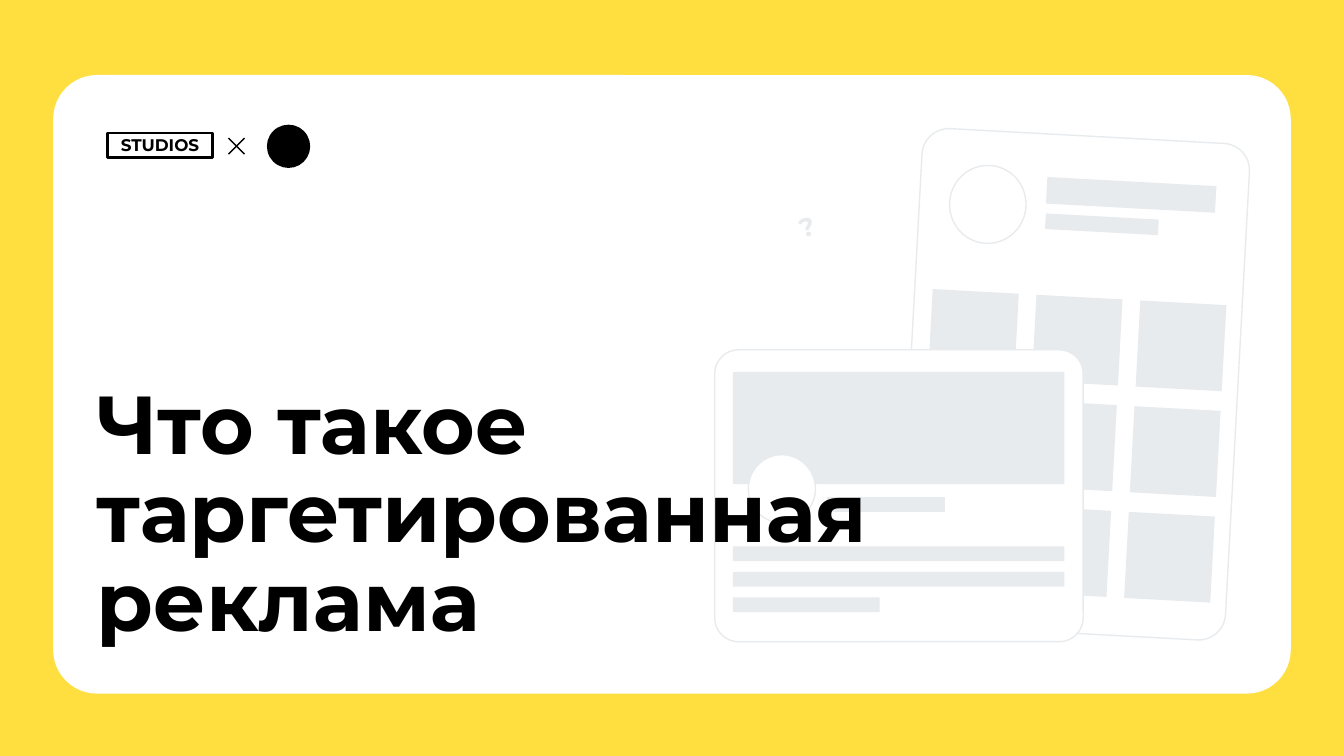
from dataclasses import dataclass
from math import cos, radians, sin
from typing import Optional

from lxml import etree
from pptx import Presentation
from pptx.dml.color import RGBColor
from pptx.enum.shapes import MSO_CONNECTOR, MSO_SHAPE
from pptx.enum.text import MSO_ANCHOR, PP_ALIGN
from pptx.oxml.ns import qn
from pptx.util import Pt

RECTANGLE = MSO_SHAPE.RECTANGLE
ROUNDED = MSO_SHAPE.ROUNDED_RECTANGLE
OVAL = MSO_SHAPE.OVAL
STRAIGHT = MSO_CONNECTOR.STRAIGHT
TOP, MIDDLE, BOTTOM = MSO_ANCHOR.TOP, MSO_ANCHOR.MIDDLE, MSO_ANCHOR.BOTTOM
LEFT, CENTER = PP_ALIGN.LEFT, PP_ALIGN.CENTER


@dataclass(frozen=True)
class Theme:
    yellow: str = "FFDE40"
    white: str = "FFFFFF"
    black: str = "000000"
    gray: str = "E8EBED"
    font: str = "Montserrat"
    title_size: float = 44
    mark_size: float = 14
    label_size: float = 9
    thin: float = 0.75
    frame: float = 1.5


THEME = Theme()


@dataclass(frozen=True)
class Block:
    """A preset shape; lengths in points, rotation in degrees."""
    left: float
    top: float
    width: float
    height: float
    kind: int = RECTANGLE
    fill: Optional[str] = THEME.gray
    line: Optional[str] = None
    line_width: float = THEME.thin
    corner: Optional[float] = None
    rotation: float = 0


def draw_block(slide, block: Block):
    shape = slide.shapes.add_shape(block.kind, Pt(block.left), Pt(block.top),
                                   Pt(block.width), Pt(block.height))
    shape.shadow.inherit = False
    shape.rotation = block.rotation
    if block.corner is not None:
        shape.adjustments[0] = block.corner
    if block.fill:
        shape.fill.solid()
        shape.fill.fore_color.rgb = RGBColor.from_string(block.fill)
    else:
        shape.fill.background()
    if block.line:
        shape.line.color.rgb = RGBColor.from_string(block.line)
        shape.line.width = Pt(block.line_width)
    else:
        shape.line.fill.background()
    return shape


def draw_line(slide, x1: float, y1: float, x2: float, y2: float) -> None:
    connector = slide.shapes.add_connector(STRAIGHT, Pt(x1), Pt(y1), Pt(x2), Pt(y2))
    connector.line.color.rgb = RGBColor.from_string(THEME.black)
    connector.line.width = Pt(THEME.thin)
    etree.SubElement(connector._element.spPr, qn("a:effectLst"))


def write(shape, text: str, size: float, color: str, align: int = CENTER,
          anchor: int = TOP, inset: float = 7.2, spacing: float = 1) -> None:
    frame = shape.text_frame
    frame.text = text
    frame.word_wrap = True
    frame.vertical_anchor = anchor
    frame.margin_left = frame.margin_right = Pt(inset)
    frame.margin_top = frame.margin_bottom = Pt(inset / 2)
    paragraph = frame.paragraphs[0]
    paragraph.alignment = align
    paragraph.line_spacing = spacing
    font = paragraph.runs[0].font
    font.name = THEME.font
    font.size = Pt(size)
    font.bold = True
    font.color.rgb = RGBColor.from_string(color)


def draw_partners(slide) -> None:
    label = draw_block(slide, Block(57.6, 71.3, 56.2, 13, fill=None,
                                    line=THEME.black, line_width=THEME.frame))
    write(label, "STUDIOS", THEME.label_size, THEME.black, anchor=MIDDLE, inset=0)
    left, top, side = 122.4, 74, 8.6
    draw_line(slide, left, top, left + side, top + side)
    draw_line(slide, left + side, top, left, top + side)
    draw_block(slide, Block(143, 66.8, 23.2, 23.2, OVAL, THEME.black))


def draw_phone(slide) -> None:
    tilt = 3.1
    outline = {"fill": None, "line": THEME.gray, "rotation": tilt}
    draw_block(slide, Block(487.4, 72.7, 175.7, 266.4, ROUNDED, corner=0.082, **outline))
    draw_block(slide, Block(508.7, 88.6, 41, 41.8, OVAL, **outline))
    draw_block(slide, Block(560.7, 97.3, 90.7, 14.3, rotation=tilt))
    draw_block(slide, Block(560, 116, 60.6, 8.4, rotation=tilt))

    # Tilted grid of posts; the card covers the first column below row one
    tile, step = 46.2, 56.7
    across, down = step * cos(radians(tilt)), step * sin(radians(tilt))
    column_step = 55.6
    for row, first_column in enumerate((0, 1, 1)):
        for column in range(first_column, 3):
            left = 498.4 + column * column_step - row * down
            top = 156.1 + column * down + row * across
            draw_block(slide, Block(left, top, tile, tile, rotation=tilt))


def draw_card(slide) -> None:
    left, width, bar = 392.6, 177.6, 7.9
    outline = {"fill": THEME.white, "line": THEME.gray}
    draw_block(slide, Block(382.9, 187.4, 197.4, 156.4, ROUNDED, corner=0.082, **outline))
    draw_block(slide, Block(left, 199.2, width, 60.2))
    draw_block(slide, Block(443, 266.3, 63.2, bar))
    draw_block(slide, Block(400.9, 243.6, 36, 36.5, OVAL, **outline))
    for row, bar_width in enumerate((width, width, 78.7)):
        draw_block(slide, Block(left, 292.7 + row * 13.7, bar_width, bar))


def main() -> None:
    presentation = Presentation()
    presentation.slide_width, presentation.slide_height = Pt(720), Pt(405)
    slide = presentation.slides.add_slide(presentation.slide_layouts[6])
    slide.background.fill.solid()
    slide.background.fill.fore_color.rgb = RGBColor.from_string(THEME.yellow)

    # Panel, partner marks and illustrations
    draw_block(slide, Block(28.5, 40.2, 663, 331.4, ROUNDED, THEME.white, corner=0.071))
    draw_partners(slide)
    draw_phone(slide)
    draw_card(slide)

    # Title and the tilted question mark
    title = slide.shapes.add_textbox(Pt(44.6), Pt(247.7), Pt(584.6), Pt(107.3))
    write(title, "Что такое таргетированная реклама", THEME.title_size,
          THEME.black, LEFT, BOTTOM, spacing=0.9)
    title.text_frame.margin_top = title.text_frame.margin_bottom = Pt(7.2)
    question = slide.shapes.add_textbox(Pt(415.4), Pt(108.7), Pt(41.8), Pt(56.2))
    question.rotation = -14.9
    write(question, "?", THEME.mark_size, THEME.gray)

    presentation.save("out.pptx")


if __name__ == "__main__":
    main()
